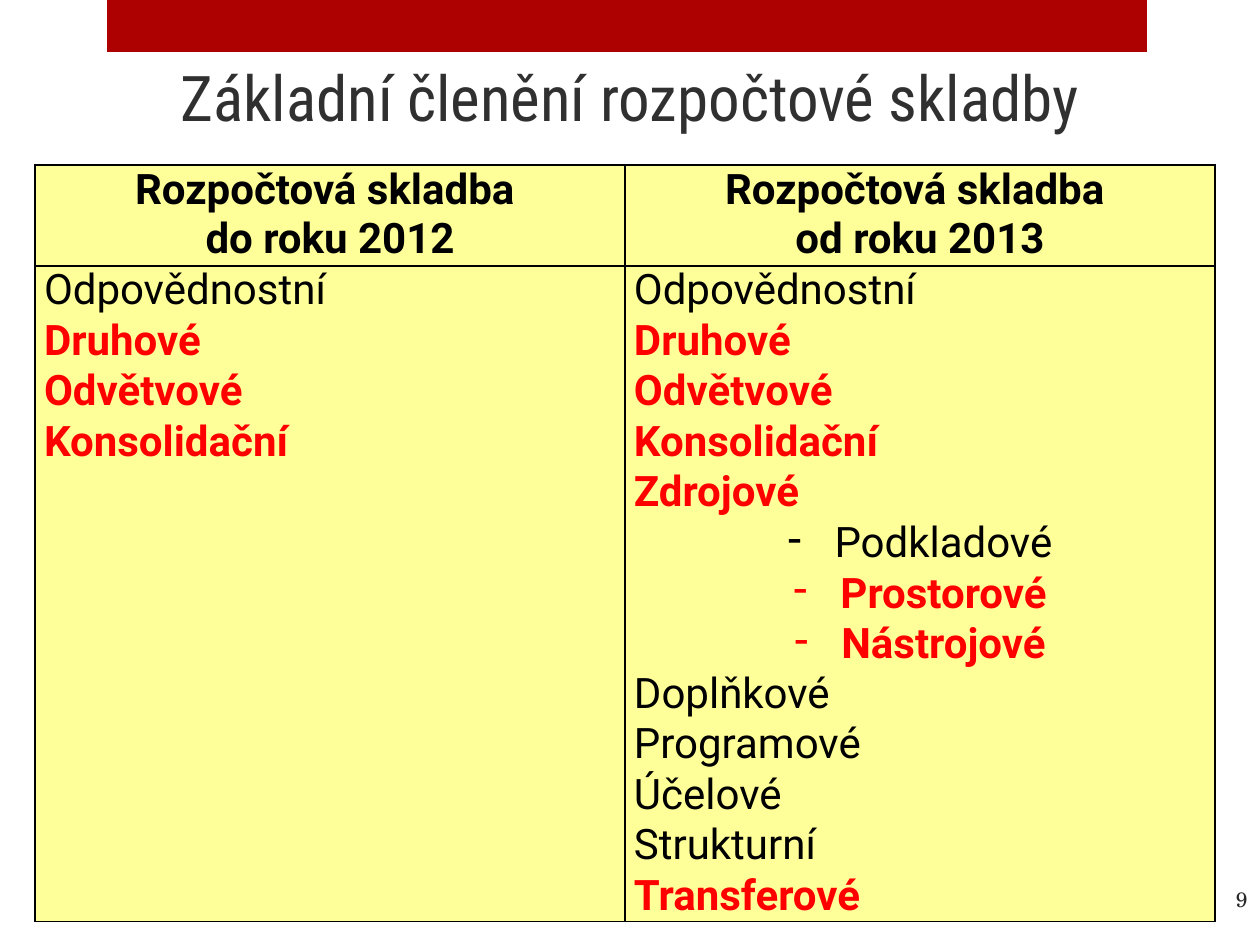
from dataclasses import dataclass

from lxml.etree import SubElement
from pptx import Presentation
from pptx.dml.color import RGBColor as Color
from pptx.enum.shapes import MSO_SHAPE as Shape
from pptx.enum.text import MSO_ANCHOR as Anchor, PP_ALIGN as Align
from pptx.oxml.ns import qn
from pptx.util import Emu, Pt

PX_PER_INCH = 126


@dataclass(frozen=True)
class Theme:
    bar: str = "AD0101"
    title: str = "303030"
    number: str = "262626"
    ink: str = "000000"
    accent: str = "FF0000"
    cell: str = "FFFF99"
    title_font: str = "Roboto Condensed"
    body_font: str = "Roboto"
    number_font: str = "TeX Gyre Schola"
    title_size: int = 36
    body_size: int = 24
    number_size: int = 12


THEME = Theme()

HEADERS = (
    ["Rozpočtová skladba ", "do roku 2012"],
    ["Rozpočtová skladba ", "od roku 2013"],
)
SHARED = ["Odpovědnostní", "Druhové", "Odvětvové", "Konsolidační"]
SOURCES = ["Podkladové", "Prostorové", "Nástrojové"]
SINCE_2013 = SHARED + ["Zdrojové"] + SOURCES + [
    "Doplňkové", "Programové", "Účelové", "Strukturní", "Transferové"]
HIGHLIGHTED = {"Druhové", "Odvětvové", "Konsolidační", "Zdrojové",
               "Prostorové", "Nástrojové", "Transferové"}


def px(length):
    return Emu(round(length * 914400 / PX_PER_INCH))


def write(frame, lines, *, size=THEME.body_size, font=THEME.body_font,
          color=THEME.ink, bold=False, align=Align.LEFT, dash=False):
    """Write one paragraph per line, all in the same format."""
    for index, line in enumerate(lines):
        para = frame.paragraphs[0] if index == 0 else frame.add_paragraph()
        para.alignment = align
        if dash:
            props = para._p.get_or_add_pPr()
            props.set("marL", str(px(47)))
            props.set("indent", str(-px(47)))
            SubElement(props, qn("a:buChar"), char="-")
        span = para.add_run()
        span.text = line
        span.font.size = Pt(size)
        span.font.name = font
        span.font.bold = bold
        span.font.color.rgb = Color.from_string(color)


def add_bar(page, left, top, width, height):
    bar = page.shapes.add_shape(
        Shape.RECTANGLE, px(left), px(top), px(width), px(height))
    bar.shadow.inherit = False
    bar.fill.solid()
    bar.fill.fore_color.rgb = Color.from_string(THEME.bar)
    bar.line.fill.background()


def add_text(page, left, top, width, height, text, anchor=Anchor.TOP, **style):
    box = page.shapes.add_textbox(px(left), px(top), px(width), px(height))
    box.text_frame.word_wrap = True
    box.text_frame.vertical_anchor = anchor
    write(box.text_frame, [text], **style)


def set_borders(cell, visible):
    props = cell._tc.get_or_add_tcPr()
    for side in "LRTB":
        line = SubElement(props, qn(f"a:ln{side}"), w=str(Pt(1)))
        if side in visible:
            fill = SubElement(line, qn("a:solidFill"))
            SubElement(fill, qn("a:srgbClr"), val=THEME.ink)
        else:
            SubElement(line, qn("a:noFill"))


def format_cell(cell, borders):
    cell.margin_left = cell.margin_right = px(9)
    cell.margin_top = cell.margin_bottom = 0
    set_borders(cell, borders)
    cell.fill.solid()
    cell.fill.fore_color.rgb = Color.from_string(THEME.cell)


def write_item(cell, item):
    marked = item in HIGHLIGHTED
    nested = item in SOURCES
    if nested:
        cell.vertical_anchor = Anchor.MIDDLE
    write(cell.text_frame, [item], bold=marked, dash=nested,
          color=THEME.accent if marked else THEME.ink,
          align=Align.CENTER if nested else Align.LEFT)


def add_comparison(page, left, top, column_width, row_height):
    rows = len(SINCE_2013) + 1
    table = page.shapes.add_table(
        rows, 2, px(left), px(top), px(2 * column_width),
        px((rows + 1) * row_height)).table
    for column in table.columns:
        column.width = px(column_width)
    # The header holds two lines, every other row one
    for index, row in enumerate(table.rows):
        row.height = px(row_height * (2 if index == 0 else 1))
        borders = "LR"
        if index <= 1:
            borders += "T"
        if index in (0, rows - 1):
            borders += "B"
        for cell in row.cells:
            format_cell(cell, borders)
    for column, (header, items) in enumerate(zip(HEADERS, (SHARED, SINCE_2013))):
        write(table.cell(0, column).text_frame, header,
              bold=True, align=Align.CENTER)
        for index, item in enumerate(items, start=1):
            write_item(table.cell(index, column), item)


def main():
    deck = Presentation()
    deck.slide_width, deck.slide_height = px(1260), px(945)
    page = deck.slides.add_slide(deck.slide_layouts[6])

    # Top bar and page number
    add_bar(page, 107, 0, 1040, 52)
    add_text(page, 966, 880, 294, 65, "9", size=THEME.number_size,
             font=THEME.number_font, color=THEME.number, align=Align.RIGHT)

    # Title
    add_text(page, 0, 38, 1260, 117, "Základní členění rozpočtové skladby",
             anchor=Anchor.MIDDLE, size=THEME.title_size,
             font=THEME.title_font, color=THEME.title, align=Align.CENTER)

    # Budget classification before and after the change
    add_comparison(page, 35, 165, 590, 49)

    deck.save("out.pptx")


if __name__ == "__main__":
    main()
